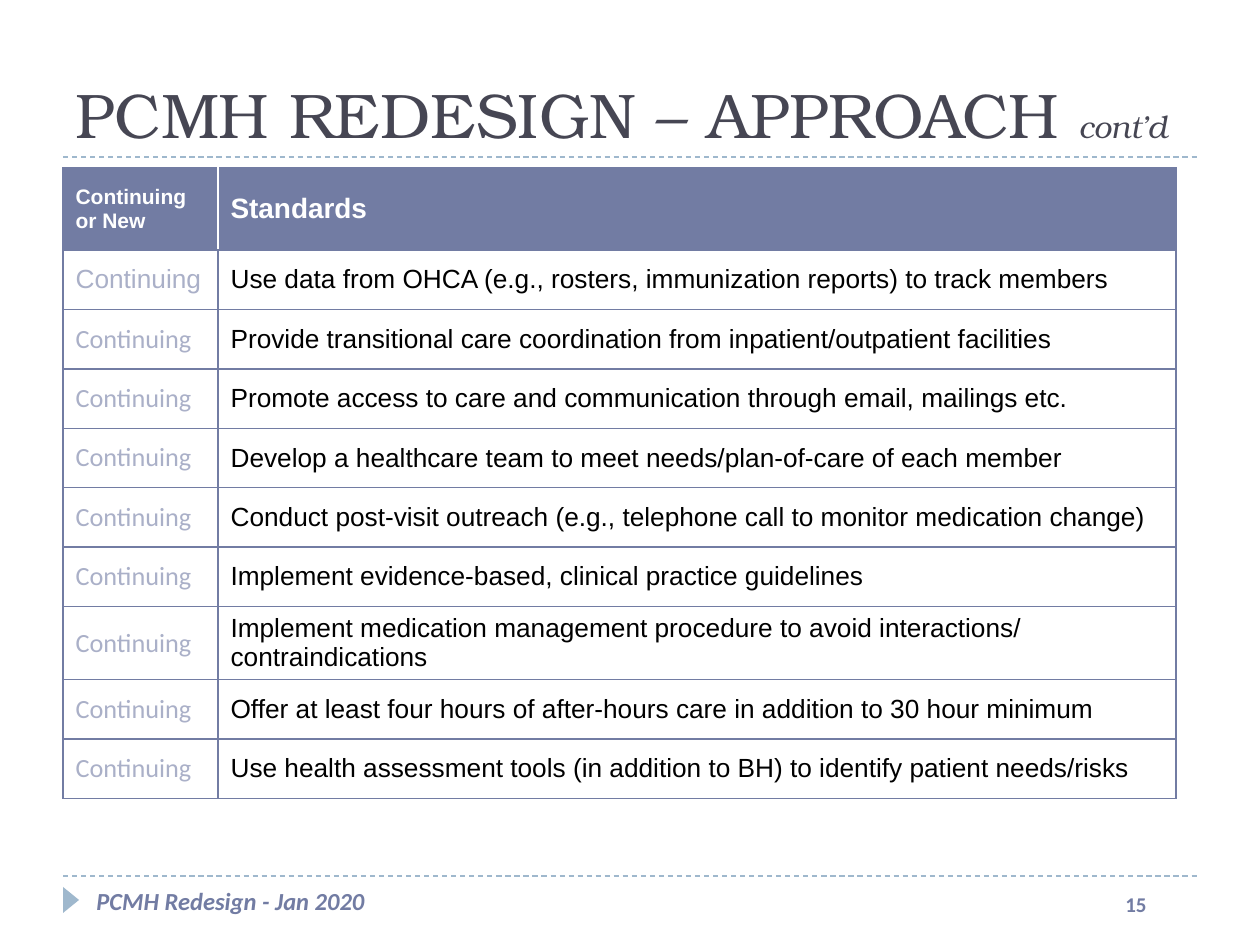
from lxml.etree import SubElement
from pptx import Presentation
from pptx.dml.color import RGBColor
from pptx.enum.dml import MSO_LINE
from pptx.enum.shapes import MSO_CONNECTOR, MSO_SHAPE
from pptx.enum.text import MSO_ANCHOR
from pptx.oxml.ns import qn
from pptx.util import Pt

COLORS = {
    "accent": "727CA3",
    "rule": "9FB8CD",
    "title": "464653",
    "faded": "AAB0C8",
    "white": "FFFFFF",
    "black": "000000",
}
STANDARDS = [
    "Use data from OHCA (e.g., rosters, immunization reports) to track members",
    "Provide transitional care coordination from inpatient/outpatient facilities",
    "Promote access to care and communication through email, mailings etc.",
    "Develop a healthcare team to meet needs/plan-of-care of each member",
    "Conduct post-visit outreach (e.g., telephone call to monitor medication change)",
    "Implement evidence-based, clinical practice guidelines",
    "Implement medication management procedure to avoid interactions/ contraindications",
    "Offer at least four hours of after-hours care in addition to 30 hour minimum",
    "Use health assessment tools (in addition to BH) to identify patient needs/risks",
]


def px(length):
    return round(length * 914400 / 126)


def color(name):
    return RGBColor.from_string(COLORS[name])


def add_span(para, text, font, size, ink, bold=False, italic=False):
    span = para.add_run()
    span.text = text
    span.font.name, span.font.size = font, Pt(size)
    span.font.bold, span.font.italic = bold, italic
    span.font.color.rgb = color(ink)


def add_text_box(page, left, top, width, height, anchor=MSO_ANCHOR.TOP):
    box = page.shapes.add_textbox(px(left), px(top), px(width), px(height))
    box.text_frame.word_wrap = True
    box.text_frame.vertical_anchor = anchor
    return box.text_frame.paragraphs[0]


def add_rule(page, left, top, width):
    rule = page.shapes.add_connector(
        MSO_CONNECTOR.STRAIGHT, px(left), px(top), px(left + width), px(top))
    rule.line.color.rgb = color("rule")
    rule.line.width = Pt(0.75)
    rule.line.dash_style = MSO_LINE.DASH
    SubElement(rule._element.spPr, qn("a:effectLst"))


def add_title(page, left, top, width, height):
    add_rule(page, left, top + height, width)
    para = add_text_box(page, left, top, width, height, MSO_ANCHOR.BOTTOM)
    add_span(para, "PCMH REDESIGN – APPROACH ", "TeX Gyre Bonum", 36, "title")
    add_span(para, "cont’d", "TeX Gyre Bonum", 18, "title", italic=True)


def set_border(cell, side, ink, width):
    line = SubElement(cell._tc.get_or_add_tcPr(), qn(f"a:ln{side}"), w=str(Pt(width)))
    fill = SubElement(line, qn("a:solidFill"))
    SubElement(fill, qn("a:srgbClr"), val=COLORS[ink])


def style_cell(cell, row, column, last_row):
    # Thin outer edges, heavier inner ones, white divider in the header
    divider = "accent" if row else "white"
    set_border(cell, "L", divider if column else "accent", 1 if column else 0.75)
    set_border(cell, "R", "accent" if column else divider, 0.75 if column else 1)
    set_border(cell, "T", "accent", 1 if row > 1 else 0.75)
    set_border(cell, "B", "accent", 1 if 0 < row < last_row else 0.75)
    cell.fill.solid()
    cell.fill.fore_color.rgb = color("white" if row else "accent")
    cell.vertical_anchor = MSO_ANCHOR.MIDDLE
    cell.margin_top = cell.margin_bottom = px(5)


def add_standards_table(page, left, top, width, height):
    status_width, header_height = 155, 82
    count = len(STANDARDS)
    table = page.shapes.add_table(
        count + 1, 2, px(left), px(top), px(width), px(height)).table
    table.columns[0].width = px(status_width)
    table.columns[1].width = px(width - status_width)
    for index, row in enumerate(table.rows):
        row.height = px(height - header_height) // count if index else px(header_height)
        for column, cell in enumerate(row.cells):
            style_cell(cell, index, column, count)

    # Header
    for column, (text, size) in enumerate([("Continuing or New", 12), ("Standards", 16)]):
        para = table.cell(0, column).text_frame.paragraphs[0]
        add_span(para, text, "Arial", size, "white", bold=True)

    # Body
    for row, standard in enumerate(STANDARDS, start=1):
        status, description = (
            table.cell(row, column).text_frame.paragraphs[0] for column in range(2))
        add_span(status, "Continuing", "Arial" if row == 1 else "Calibri", 15, "faded")
        add_span(description, standard, "Arial", 15, "black")


def add_footer(page, left, top, width):
    add_rule(page, left, top, width)
    marker = page.shapes.add_shape(
        MSO_SHAPE.ISOSCELES_TRIANGLE, px(left - 5), px(top + 16), px(26), px(16))
    marker.rotation = 90
    marker.shadow.inherit = False
    marker.fill.solid()
    marker.fill.fore_color.rgb = color("rule")
    marker.line.fill.background()
    para = add_text_box(page, left + 21, top + 4, 567, 65)
    add_span(para, "PCMH Redesign - Jan 2020", "Calibri", 14, "accent", True, True)
    para = add_text_box(page, left + 1050, top + 9, 73, 50)
    add_span(para, "15", "Calibri", 12, "accent", bold=True)


def main():
    deck = Presentation()
    deck.slide_width, deck.slide_height = px(1260), px(945)
    page = deck.slides.add_slide(deck.slide_layouts[6])
    add_footer(page, 63, 876, 1134)
    add_title(page, 63, 21, 1134, 136)
    add_standards_table(page, 63, 168, 1113, 617)
    deck.save("out.pptx")


if __name__ == "__main__":
    main()
